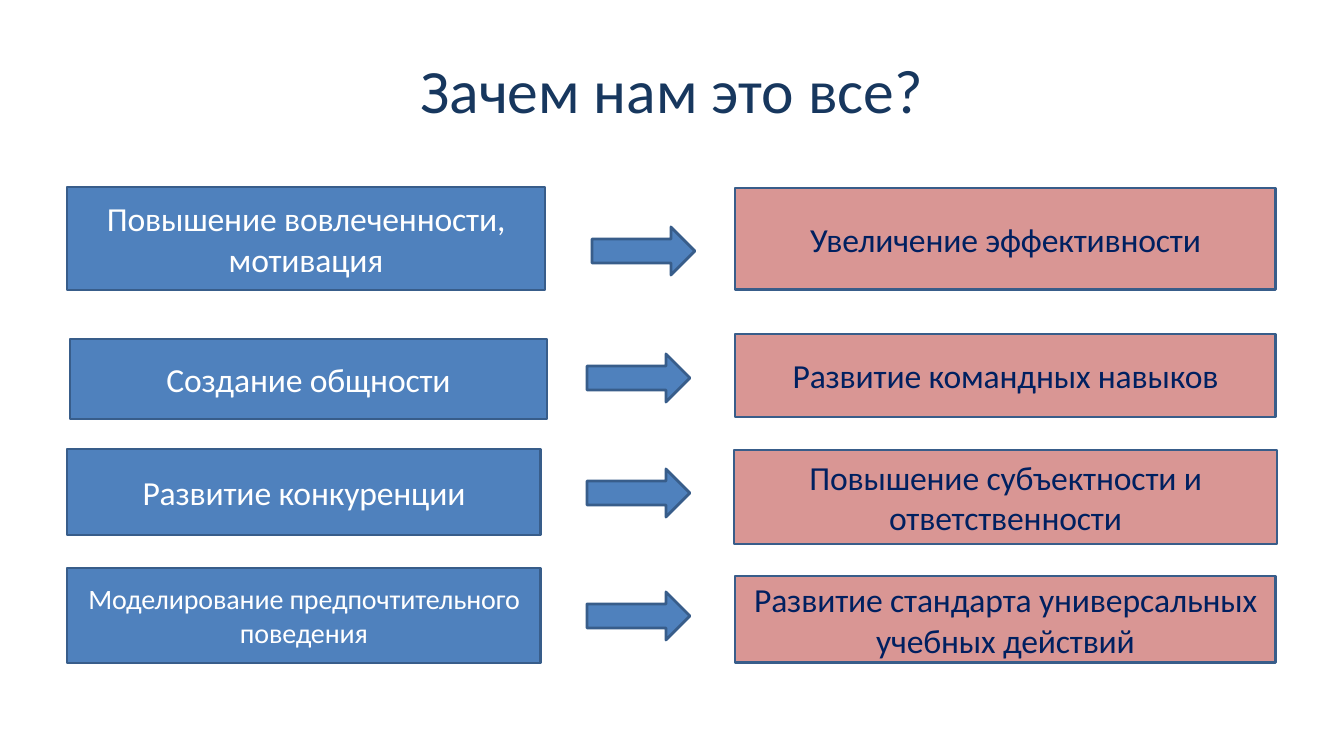
import pptx
import pptx.dml.color
import pptx.enum.shapes
import pptx.enum.text
import pptx.util

TITLE = ("Зачем нам это все?", (419, 50, 506, 78))
ROWS = [
    {
        "action": ("Повышение вовлеченности, мотивация", (67, 187, 478, 103), 24),
        "arrow": (592, 227),
        "result": ("Увеличение эффективности", (735, 188, 541, 102)),
    },
    {
        "action": ("Создание общности", (70, 339, 477, 80), 24),
        "arrow": (587, 354),
        "result": ("Развитие командных навыков", (735, 334, 541, 83)),
    },
    {
        "action": ("Развитие конкуренции", (67, 449, 474, 86), 24),
        "arrow": (587, 469),
        "result": ("Повышение субъектности и ответственности", (734, 450, 543, 94)),
    },
    {
        "action": ("Моделирование предпочтительного поведения", (67, 568, 474, 95), 20),
        "arrow": (587, 592),
        "result": ("Развитие стандарта универсальных учебных действий", (735, 576, 541, 87)),
    },
]
ARROW_SIZE = (103, 48)
THEME = {
    "font": "Calibri",
    "title": "17375E",
    "action_fill": "4F81BD",
    "action_text": "FFFFFF",
    "result_fill": "D99694",
    "result_text": "002060",
    "outline": "385D8A",
    "outline_width": 2,
    "title_size": 44,
    "result_size": 24,
    "tracking": -10,
}
SLIDE_WIDTH, SLIDE_HEIGHT = 1344, 756
EMU_PER_PX = 12192000 / SLIDE_WIDTH


def px(*lengths):
    return [pptx.util.Emu(round(length * EMU_PER_PX)) for length in lengths]


def rgb(code):
    return pptx.dml.color.RGBColor.from_string(code)


def write(shape, text, *, size, color, tracking=0, wrap=True):
    frame = shape.text_frame
    frame.word_wrap = wrap
    frame.vertical_anchor = pptx.enum.text.MSO_ANCHOR.MIDDLE
    frame.margin_left = frame.margin_right = 0
    frame.margin_top = frame.margin_bottom = 0
    paragraph = frame.paragraphs[0]
    paragraph.alignment = pptx.enum.text.PP_ALIGN.CENTER
    run = paragraph.add_run()
    run.text = text
    run.font.name = THEME["font"]
    run.font.size = pptx.util.Pt(size)
    run.font.color.rgb = rgb(color)
    run.font._element.set("spc", str(tracking))


def draw(slide, preset, bounds, fill):
    shape = slide.shapes.add_shape(preset, *px(*bounds))
    shape.shadow.inherit = False
    shape.fill.solid()
    shape.fill.fore_color.rgb = rgb(fill)
    shape.line.color.rgb = rgb(THEME["outline"])
    shape.line.width = pptx.util.Pt(THEME["outline_width"])
    return shape


def main():
    deck = pptx.Presentation()
    deck.slide_width, deck.slide_height = px(SLIDE_WIDTH, SLIDE_HEIGHT)
    slide = deck.slides.add_slide(deck.slide_layouts[6])
    presets = pptx.enum.shapes.MSO_SHAPE

    heading, heading_bounds = TITLE
    title = slide.shapes.add_textbox(*px(*heading_bounds))
    write(title, heading, size=THEME["title_size"], color=THEME["title"], wrap=False)

    for row in ROWS:
        text, bounds, size = row["action"]
        action = draw(slide, presets.RECTANGLE, bounds, THEME["action_fill"])
        write(action, text, size=size, color=THEME["action_text"], tracking=THEME["tracking"])

        draw(slide, presets.RIGHT_ARROW, row["arrow"] + ARROW_SIZE, THEME["action_fill"])

        text, bounds = row["result"]
        result = draw(slide, presets.RECTANGLE, bounds, THEME["result_fill"])
        write(result, text, size=THEME["result_size"], color=THEME["result_text"],
              tracking=THEME["tracking"])

    deck.save("out.pptx")


if __name__ == "__main__":
    main()
